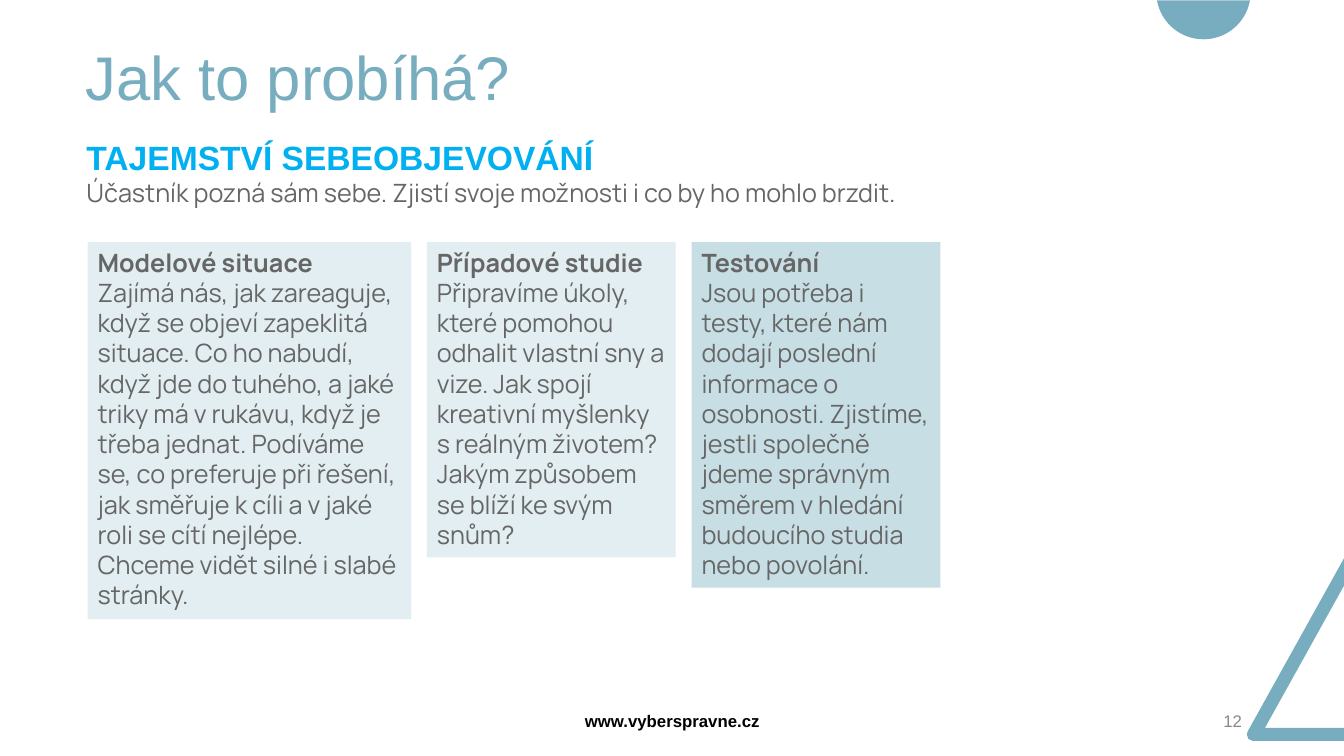
from dataclasses import dataclass
from math import cos, radians, sin

from pptx import Presentation
from pptx.dml.color import RGBColor as RGB
from pptx.enum.shapes import MSO_SHAPE as Shape
from pptx.enum.text import MSO_ANCHOR as Anchor, PP_ALIGN as Align
from pptx.util import Cm, Pt


@dataclass(frozen=True)
class Theme:
    accent: str = "77ADBE"
    headline: str = "00B0F0"
    body: str = "666666"
    number: str = "888888"
    black: str = "000000"
    pale: str = "E2EEF1"
    tint: str = "C7DEE4"
    sans: str = "Arial"
    text: str = "Manrope"
    title_size: int = 44
    headline_size: int = 24
    body_size: int = 18
    footer_size: int = 12


theme = Theme()

TITLE = "Jak to probíhá?"
HEADLINE = "TAJEMSTVÍ SEBEOBJEVOVÁNÍ"
SUMMARY = "Účastník pozná sám sebe. Zjistí svoje možnosti i co by ho mohlo brzdit."
WEBSITE = "www.vyberspravne.cz"
PAGE = "12"
CARDS = [
    ("Modelové situace",
     "Zajímá nás, jak zareaguje, když se objeví zapeklitá situace. Co ho nabudí, "
     "když jde do tuhého, a jaké triky má v rukávu, když je třeba jednat. Podíváme se, "
     "co preferuje při řešení, jak směřuje k cíli a v jaké roli se cítí nejlépe. "
     "Chceme vidět silné i slabé stránky.",
     8.15, 9.5, theme.pale),
    ("Případové studie",
     "Připravíme úkoly, které pomohou odhalit vlastní sny a vize. Jak spojí kreativní "
     "myšlenky s reálným životem? Jakým způsobem se blíží ke svým snům?",
     6.27, 7.95, theme.pale),
    ("Testování",
     "Jsou potřeba i testy, které nám dodají poslední informace o osobnosti. Zjistíme, "
     "jestli společně jdeme správným směrem v hledání budoucího studia nebo povolání.",
     6.27, 8.71, theme.tint),
]
CARD_LEFT, CARD_TOP, CARD_GAP = 2.21, 6.1, 0.4
TRIANGLE = [(33.87, 18.67), (33.87, 18.34), (31.88, 18.34), (33.87, 14.76), (33.87, 14.07),
            (31.45, 18.42), (31.42, 18.5), (31.46, 18.62), (31.57, 18.67)]
DISC_X, DISC_Y, DISC_RADIUS = 30.33, -0.2, 1.19

deck = Presentation()
deck.slide_width, deck.slide_height = Cm(33.87), Cm(19.05)
slide = deck.slides.add_slide(deck.slide_layouts[6])


def paint(shape, color):
    shape.shadow.inherit = False
    shape.fill.solid()
    shape.fill.fore_color.rgb = RGB.from_string(color)
    shape.line.fill.background()


def outline(points, color):
    start, *rest = [(Cm(x), Cm(y)) for x, y in points]
    builder = slide.shapes.build_freeform(*start)
    builder.add_line_segments(rest, close=True)
    paint(builder.convert_to_shape(), color)


def write(shape, lines, anchor=Anchor.TOP, align=Align.LEFT):
    frame = shape.text_frame
    frame.word_wrap = True
    frame.vertical_anchor = anchor
    for index, (words, face, size, color, bold) in enumerate(lines):
        paragraph = frame.add_paragraph() if index else frame.paragraphs[0]
        paragraph.text = words
        paragraph.alignment = align
        font = paragraph.font
        font.name, font.size, font.bold = face, Pt(size), bold
        font.color.rgb = RGB.from_string(color)
    return frame


def text_box(left, top, width, height, lines, **layout):
    box = slide.shapes.add_textbox(Cm(left), Cm(top), Cm(width), Cm(height))
    return write(box, lines, **layout)


def body_line(words, bold=False):
    return words, theme.text, theme.body_size, theme.body, bold


outline(TRIANGLE, theme.accent)
outline([(DISC_X + DISC_RADIUS * cos(radians(angle)), DISC_Y + DISC_RADIUS * sin(radians(angle)))
         for angle in range(10, 171, 4)], theme.accent)

text_box(23.93, 17.65, 7.62, 1.02,
         [(PAGE, theme.sans, theme.footer_size, theme.number, False)],
         anchor=Anchor.MIDDLE, align=Align.RIGHT)

card_left = CARD_LEFT
for heading, description, width, height, color in CARDS:
    card = slide.shapes.add_shape(Shape.RECTANGLE, Cm(card_left), Cm(CARD_TOP), Cm(width), Cm(height))
    paint(card, color)
    write(card, [body_line(heading, True), body_line(description)])
    card_left += width + CARD_GAP

text_box(1.93, 3.33, 30.25, 2.82,
         [(HEADLINE, theme.sans, theme.headline_size, theme.headline, True), body_line(SUMMARY)])
title = text_box(1.91, 1.12, 25.12, 1.4,
                 [(TITLE, theme.sans, theme.title_size, theme.accent, False)], anchor=Anchor.MIDDLE)
title.paragraphs[0].line_spacing = 1.1
text_box(11.23, 17.65, 11.43, 1.02,
         [(WEBSITE, theme.sans, theme.footer_size, theme.black, True)],
         anchor=Anchor.MIDDLE, align=Align.CENTER)

deck.save("out.pptx")
